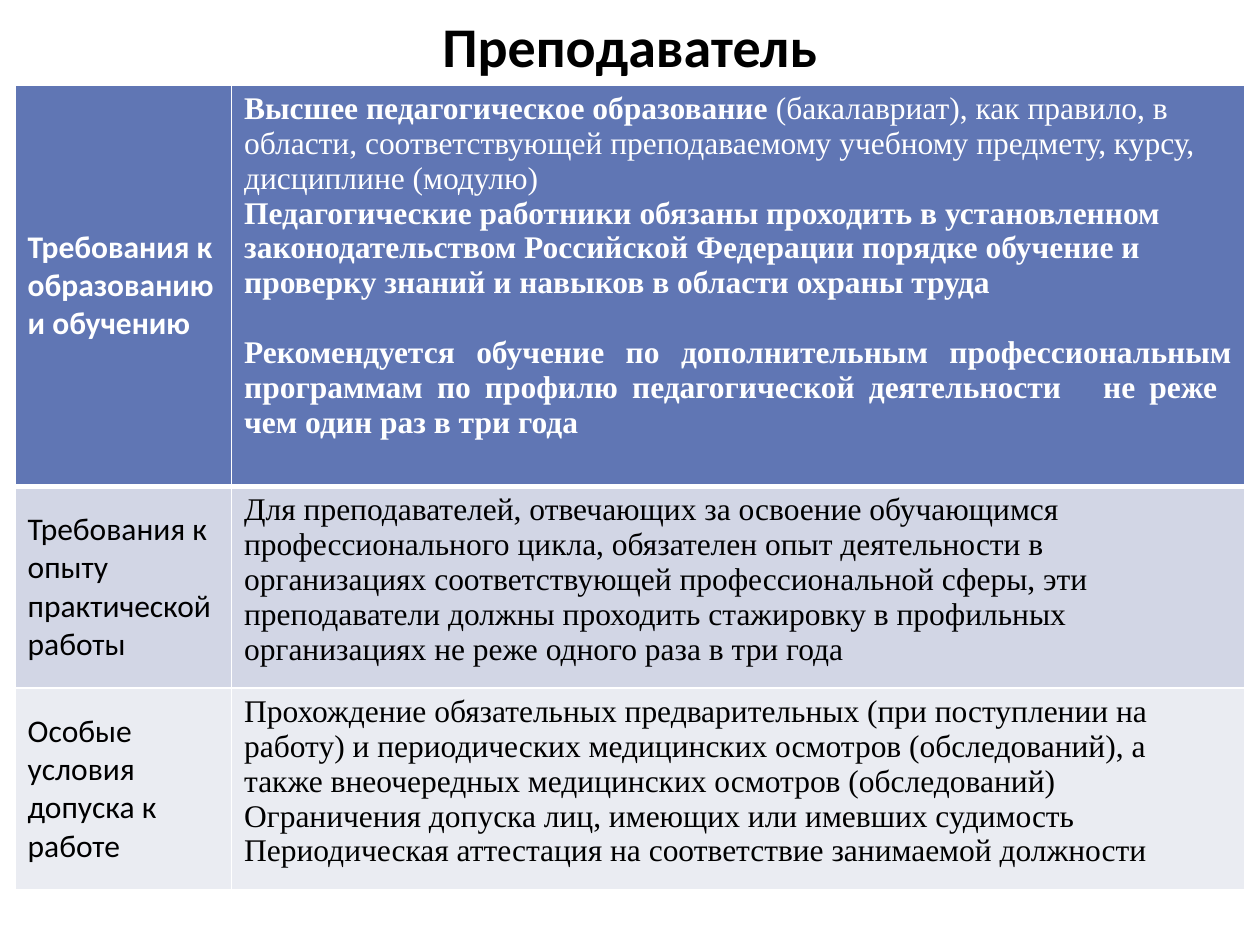
import pptx
import pptx.util
import pptx.dml.color
import pptx.enum.text
import pptx.oxml.ns
from lxml import etree

WIDTH, HEIGHT = 10, 7.5
COLORS = {"header": "6076B4", "experience": "D2D6E5", "admission": "EAECF2",
          "light": "FFFFFF", "dark": "000000"}
LABEL_FONT, DETAIL_FONT = "Calibri", "Times New Roman"
ALIGN = pptx.enum.text.PP_ALIGN
ANCHOR = pptx.enum.text.MSO_ANCHOR
COLUMN_SHARES = (0.176, 0.824)
THIN, THICK = 1, 3

# Each detail paragraph is a list of (wording, bold) runs
REQUIREMENTS = [
    {"label": "Требования к образованию и обучению",
     "fill": "header", "ink": "light", "bold": True, "share": 0.518,
     "top": THIN, "bottom": THICK,
     "details": [
         [("Высшее педагогическое образование ", True),
          ("(бакалавриат), как правило, в области, соответствующей преподаваемому "
           "учебному предмету, курсу, дисциплине (модулю)", False)],
         [("Педагогические работники обязаны проходить в установленном "
           "законодательством Российской Федерации порядке обучение и проверку "
           "знаний и навыков в области охраны труда", True)],
         [("Рекомендуется обучение по дополнительным профессиональным программам "
           "по профилю педагогической деятельности   не реже  чем один раз в три "
           "года ", True)]],
     "recommendation": 2},
    {"label": "Требования к опыту практической работы",
     "fill": "experience", "ink": "dark", "bold": False, "share": 0.241,
     "top": THICK, "bottom": THIN,
     "details": [
         [("Для преподавателей, отвечающих за освоение обучающимся "
           "профессионального цикла, обязателен опыт деятельности в организациях "
           "соответствующей профессиональной сферы, эти преподаватели должны "
           "проходить стажировку в профильных организациях не реже одного раза в "
           "три года", False)]]},
    {"label": "Особые условия допуска к работе",
     "fill": "admission", "ink": "dark", "bold": False, "share": 0.241,
     "top": THIN, "bottom": THIN,
     "details": [
         [("Прохождение обязательных предварительных (при поступлении на работу) и "
           "периодических медицинских осмотров (обследований), а также "
           "внеочередных медицинских осмотров (обследований)", False)],
         [("Ограничения допуска лиц, имеющих или имевших судимость", False)],
         [("Периодическая аттестация на соответствие занимаемой должности", False)]]},
]


def rgb(name):
    return pptx.dml.color.RGBColor.from_string(COLORS[name])


def inches_box(box):
    return [pptx.util.Inches(length) for length in box]


def set_font(font, name, size, ink, bold=None):
    font.name, font.size, font.bold = name, pptx.util.Pt(size), bold
    font.color.rgb = rgb(ink)


def style_cell(cell, requirement):
    """Borders come first, since the schema puts them before the fill."""
    properties = cell._tc.get_or_add_tcPr()
    sides = {"L": THIN, "R": THIN, "T": requirement["top"], "B": requirement["bottom"]}
    for side, points in sides.items():
        border = etree.SubElement(properties, pptx.oxml.ns.qn(f"a:ln{side}"),
                                  w=str(pptx.util.Pt(points)))
        paint = etree.SubElement(border, pptx.oxml.ns.qn("a:solidFill"))
        etree.SubElement(paint, pptx.oxml.ns.qn("a:srgbClr"), val=COLORS["light"])
    cell.fill.solid()
    cell.fill.fore_color.rgb = rgb(requirement["fill"])


def fill_label(cell, requirement):
    style_cell(cell, requirement)
    cell.vertical_anchor = ANCHOR.MIDDLE
    label = cell.text_frame.paragraphs[0]
    label.text = requirement["label"]
    set_font(label.runs[0].font, LABEL_FONT, 18, requirement["ink"], requirement["bold"])


def fill_details(cell, requirement):
    style_cell(cell, requirement)
    frame = cell.text_frame
    for index, pieces in enumerate(requirement["details"]):
        detail = frame.add_paragraph() if index else frame.paragraphs[0]
        if index == requirement.get("recommendation"):
            detail.alignment = ALIGN.JUSTIFY
            detail.space_before = pptx.util.Pt(20)
        for wording, bold in pieces:
            run = detail.add_run()
            run.text = wording
            set_font(run.font, DETAIL_FONT, 18, requirement["ink"], bold)


def add_title(slide, box):
    frame = slide.shapes.add_textbox(*inches_box(box)).text_frame
    frame.word_wrap = True
    frame.vertical_anchor = ANCHOR.MIDDLE
    frame.margin_top = frame.margin_bottom = 0
    heading = frame.paragraphs[0]
    heading.text = "Преподаватель"
    heading.alignment = ALIGN.CENTER
    set_font(heading.font, LABEL_FONT, 32, "dark", True)


def add_requirements(slide, box):
    table = slide.shapes.add_table(len(REQUIREMENTS), len(COLUMN_SHARES),
                                   *inches_box(box)).table
    table.horz_banding = False
    for column, share in zip(table.columns, COLUMN_SHARES):
        column.width = pptx.util.Inches(box[2] * share)
    for row, requirement in zip(table.rows, REQUIREMENTS):
        row.height = pptx.util.Inches(box[3] * requirement["share"])
        fill_label(row.cells[0], requirement)
        fill_details(row.cells[1], requirement)


def main():
    deck = pptx.Presentation()
    deck.slide_width = pptx.util.Inches(WIDTH)
    deck.slide_height = pptx.util.Inches(HEIGHT)
    slide = deck.slides.add_slide(deck.slide_layouts[6])
    # Heading band, then the table of requirements
    add_title(slide, (0.02 * WIDTH, 0.13, 0.96 * WIDTH, 0.46))
    add_requirements(slide, (0.12, 0.09 * HEIGHT, WIDTH - 2 * 0.12, 0.82 * HEIGHT))
    deck.save("out.pptx")


if __name__ == "__main__":
    main()
